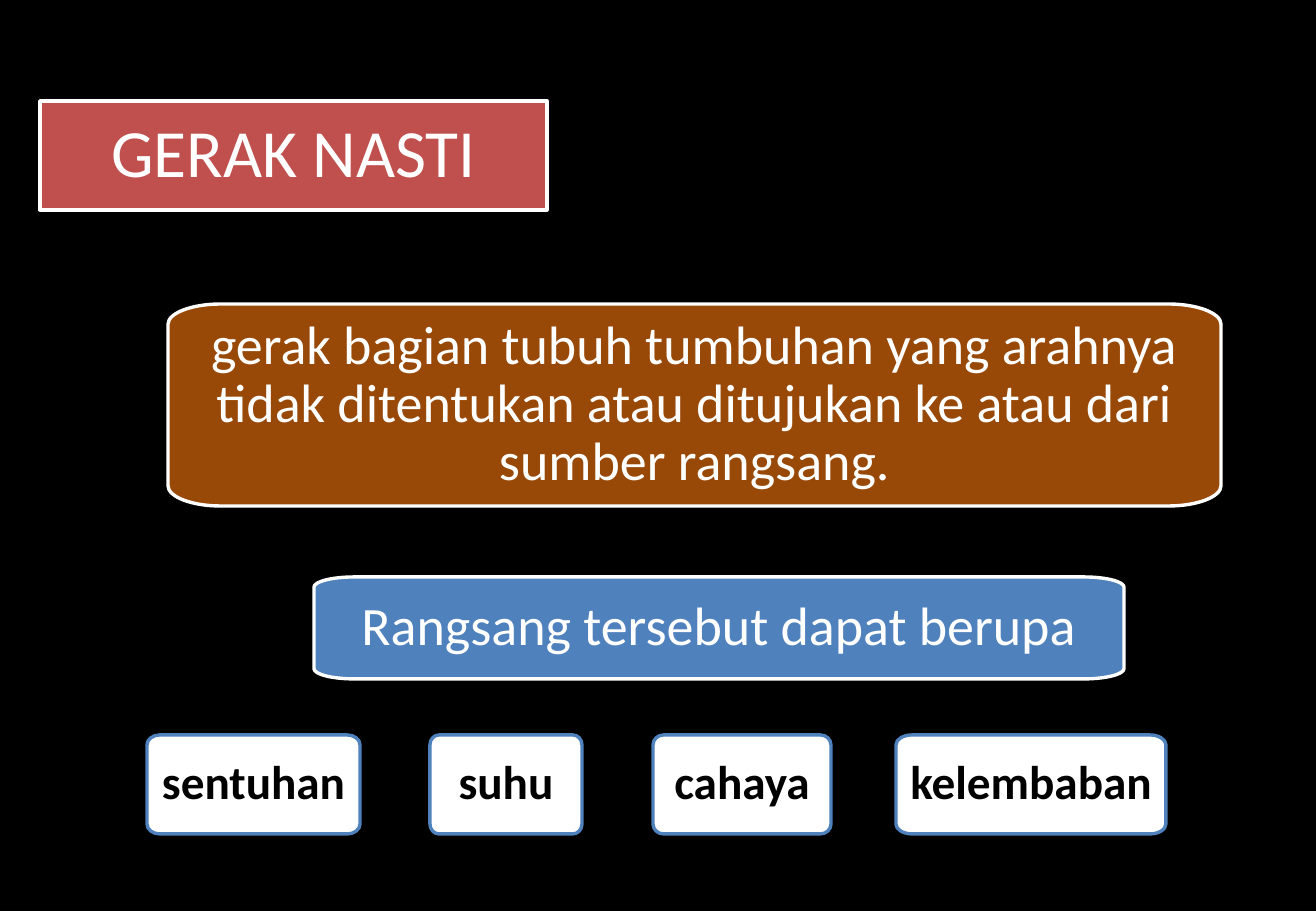
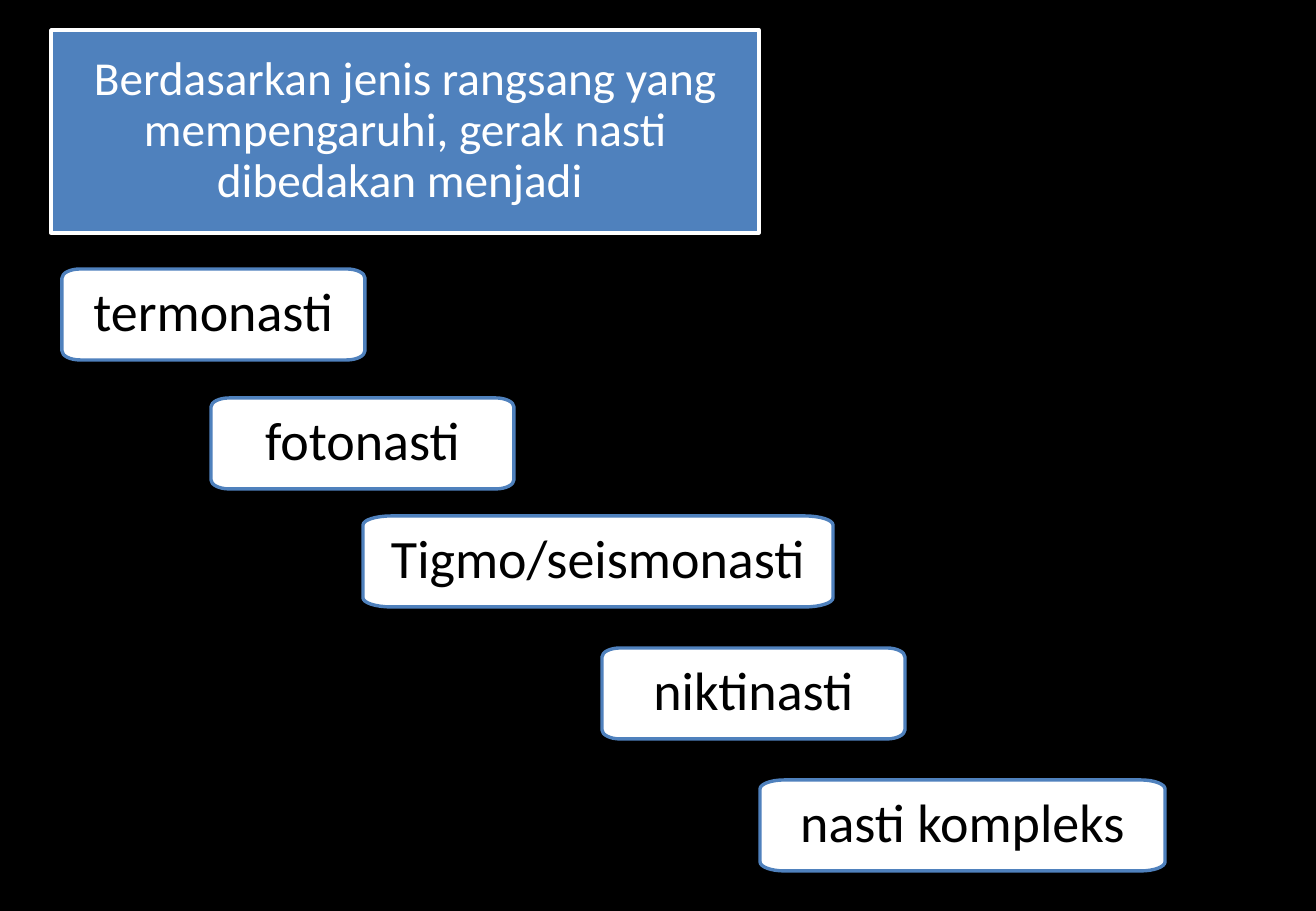
from copy import deepcopy

from pptx import Presentation
from pptx import util as u
from pptx.dml.color import RGBColor
from pptx.enum import text
from pptx.oxml import ns

# Shared look
PX = 914400 / 121.5
WIDE, HIGH = 1316, 911
FONT = "Calibri"
BLACK, WHITE = "000000", "FFFFFF"
RED, BROWN, BLUE = "C0504D", "984807", "4F81BD"
BEND = 0.55  # reach of a curve's handles towards the square corner


def px(n):
    return u.Emu(round(n * PX))


def paint(color, code):
    color.rgb = RGBColor.from_string(code)


def bend(shape):
    """Turn every other line of an eight-sided outline into a curve."""
    lines = list(shape._element.iter(ns.qn("a:lnTo")))
    start = next(shape._element.iter(ns.qn("a:moveTo")))[0]
    for i, line in enumerate(lines):
        end = line[0]
        if i % 2 == 0:
            ends = [[int(p.get(k)) for k in "xy"] for p in (start, end)]
            (ax, ay), (bx, by) = ends
            tip = (ax, by) if i % 4 == 0 else (bx, ay)
            for spot, (x, y) in enumerate(ends):
                grip = deepcopy(end)
                grip.set("x", str(round(x + BEND * (tip[0] - x))))
                grip.set("y", str(round(y + BEND * (tip[1] - y))))
                line.insert(spot, grip)
            line.tag = ns.qn("a:cubicBezTo")
        start = end


def frame(slide, box, fill, line, round_x=0.05):
    """A softly rounded box with an outline."""
    x, y, w, h = box
    rx, ry = w * round_x, h * 0.1
    r, b = x + w, y + h
    marks = [(x, y + ry), (x + rx, y), (r - rx, y), (r, y + ry),
             (r, b - ry), (r - rx, b), (x + rx, b), (x, b - ry)]
    points = [(px(mx), px(my)) for mx, my in marks]
    pen = slide.shapes.build_freeform(*points[0])
    pen.add_line_segments(points[1:], close=True)
    shape = pen.convert_to_shape()
    bend(shape)
    shape.shadow.inherit = False
    shape.fill.solid()
    paint(shape.fill.fore_color, fill)
    paint(shape.line.color, line)
    shape.line.width = u.Pt(2)
    return shape


def write(shape, words, size, color, bold=False):
    """Centred text in a shape or placeholder."""
    body = shape.text_frame
    body.text = words
    body.word_wrap = True
    body.auto_size = text.MSO_AUTO_SIZE.NONE
    body.vertical_anchor = text.MSO_ANCHOR.MIDDLE
    body.margin_left = body.margin_right = px(5)
    body.margin_top = body.margin_bottom = px(4)
    para = body.paragraphs[0]
    para.alignment = text.PP_ALIGN.CENTER
    para.line_spacing = 0.9
    font = para.runs[0].font
    font.name, font.size, font.bold = FONT, u.Pt(size), bold
    paint(font.color, color)


def head(deck, box, words, size, fill):
    """A new slide whose title takes the form of a coloured box."""
    slide = deck.slides.add_slide(deck.slide_layouts[5])
    title = slide.shapes.title
    mold = frame(slide, box, fill, WHITE)._element
    title._element.replace(title._element.spPr, mold.spPr)
    mold.getparent().remove(mold)
    write(title, words, size, WHITE)
    return slide


def panel(slide, box, words, fill):
    write(frame(slide, box, fill, WHITE), words, 32, WHITE)


def card(slide, box, words, size, bold=False):
    write(frame(slide, box, WHITE, BLUE, 0.06), words, size, BLACK, bold)


def motion(deck):
    slide = head(deck, (40, 101, 507, 109), "GERAK NASTI", 40, RED)
    panel(slide, (168, 304, 1053, 202),
          "gerak bagian tubuh tumbuhan yang arahnya tidak ditentukan "
          "atau ditujukan ke atau dari sumber rangsang.", BROWN)
    panel(slide, (314, 577, 810, 102), "Rangsang tersebut dapat berupa", BLUE)
    # Row of stimuli
    for x, w, words in [(147, 213, "sentuhan"), (430, 152, "suhu"),
                        (653, 178, "cahaya"), (896, 270, "kelembaban")]:
        card(slide, (x, 735, w, 99), words, 28, True)


def kinds(deck):
    slide = head(deck, (51, 30, 708, 203),
                 "Berdasarkan jenis rangsang yang mempengaruhi, "
                 "gerak nasti dibedakan menjadi ", 28, BLUE)
    # Staircase of kinds
    for x, y, w, words in [(62, 269, 303, "termonasti"),
                           (211, 398, 303, "fotonasti"),
                           (363, 516, 470, "Tigmo/seismonasti"),
                           (602, 648, 303, "niktinasti"),
                           (760, 780, 405, "nasti kompleks")]:
        card(slide, (x, y, w, 91), words, 32)


def main():
    deck = Presentation()
    deck.slide_width, deck.slide_height = px(WIDE), px(HIGH)
    back = deck.slide_master.background.fill
    back.solid()
    paint(back.fore_color, BLACK)
    motion(deck)
    kinds(deck)
    deck.save("out.pptx")


if __name__ == "__main__":
    main()
